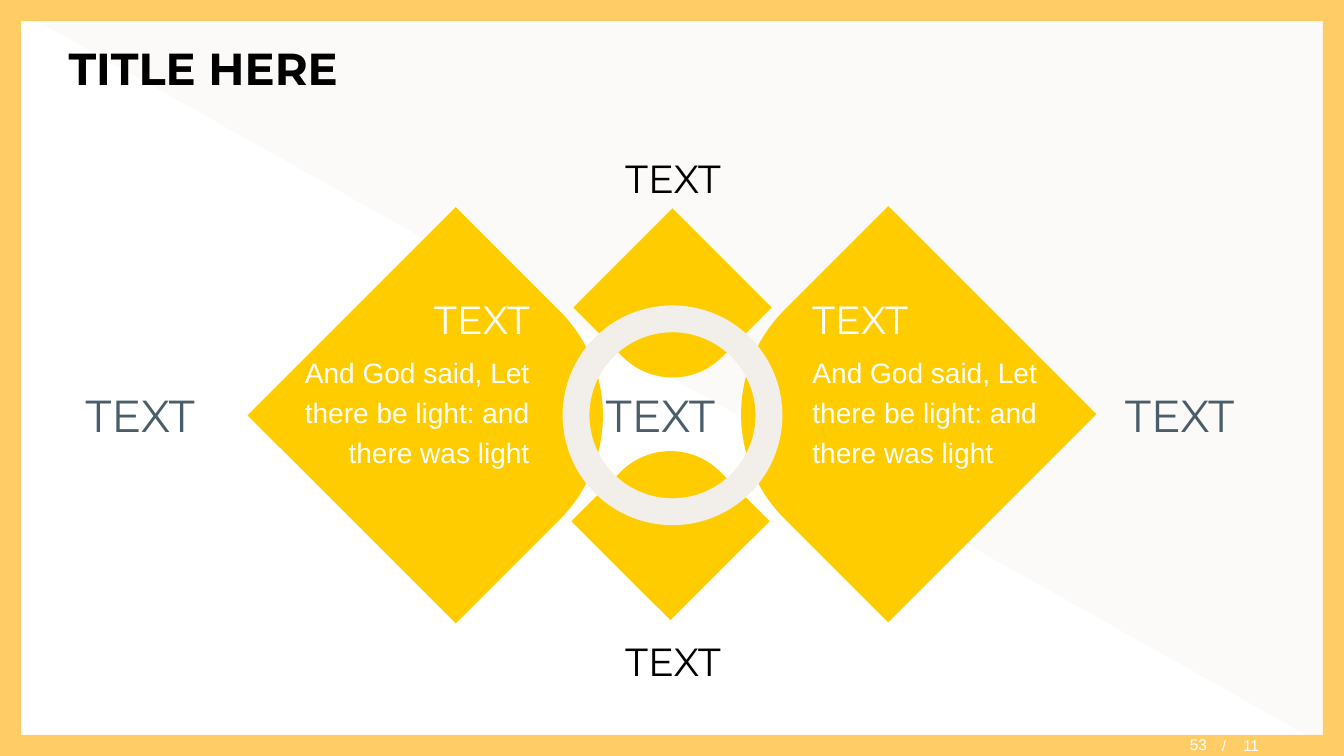
from dataclasses import dataclass

import lxml.etree
import pptx
import pptx.dml.color
import pptx.enum.shapes
import pptx.enum.text
import pptx.oxml.ns
import pptx.util

Inches = pptx.util.Inches
Shape = pptx.enum.shapes.MSO_SHAPE
Align = pptx.enum.text.PP_ALIGN
Anchor = pptx.enum.text.MSO_ANCHOR
AutoSize = pptx.enum.text.MSO_AUTO_SIZE


@dataclass(frozen=True)
class Theme:
    heading_font: str = "Montserrat"
    body_font: str = "Arial"
    black: str = "000000"
    white: str = "FFFFFF"
    slate: str = "4A5D69"
    yellow: str = "FFCC00"
    border: str = "FFCC66"
    cream: str = "FBFAF8"
    ring: str = "F2EFEA"
    large: int = 32
    medium: int = 28
    body: int = 20
    small: int = 11


@dataclass(frozen=True)
class Box:
    left: float
    top: float
    width: float
    height: float

    def inner(self, left, top, width, height):
        return Box(self.left + left, self.top + top, width, height)

    def centred(self, across, down, size):
        """Square whose centre is offset from the centre of this box."""
        return Box(self.left + self.width / 2 + across - size / 2,
                   self.top + self.height / 2 + down - size / 2, size, size)

    def lengths(self):
        return [Inches(n) for n in (self.left, self.top, self.width, self.height)]


THEME = Theme()


def add_filled(page, kind, box, color, rotation=0, adjust=None):
    shape = page.shapes.add_shape(kind, *box.lengths())
    shape.shadow.inherit = False
    shape.fill.solid()
    shape.fill.fore_color.rgb = pptx.dml.color.RGBColor.from_string(color)
    shape.line.fill.background()
    shape.rotation = rotation
    if adjust is not None:
        shape.adjustments[0] = adjust
    return shape


def add_span(para, text, size, color, font, bold=False):
    span = para.add_run()
    span.text = text
    span.font.size = pptx.util.Pt(size)
    span.font.name = font
    span.font.bold = bold
    span.font.color.rgb = pptx.dml.color.RGBColor.from_string(color)


def add_text(page, box, lines, align=Align.LEFT, wrap=True):
    """Text box that grows; each line is (text, size, color, font)."""
    frame = page.shapes.add_textbox(*box.lengths()).text_frame
    frame.word_wrap = wrap
    frame.auto_size = AutoSize.SHAPE_TO_FIT_TEXT
    for index, line in enumerate(lines):
        para = frame.add_paragraph() if index else frame.paragraphs[0]
        para.alignment = align
        para.line_spacing = 1.2
        para.space_before = para.space_after = pptx.util.Pt(2)
        add_span(para, *line)


def add_backdrop(page, box):
    # Tinted corner and border, kept behind the title
    for shape in (
        add_filled(page, Shape.RIGHT_TRIANGLE, box, THEME.cream, 180),
        add_filled(page, Shape.FRAME, box, THEME.border, adjust=0.028),
    ):
        page.shapes.title.element.addprevious(shape.element)


def add_title(page, box):
    title = page.shapes.title
    title.left, title.top, title.width, title.height = box.lengths()
    frame = title.text_frame
    frame.auto_size = AutoSize.NONE
    frame.vertical_anchor = Anchor.MIDDLE
    para = frame.paragraphs[0]
    para.alignment = Align.LEFT
    add_span(para, "TITLE HERE", THEME.large, THEME.black, THEME.heading_font, True)


def add_diagram(page, box):
    # Petals: offset from the centre, side, rotation of the rounded corner
    for across, down, side, rotation in (
        (-2.15, 0, 2.92, 45),
        (2.14, -0.01, 2.92, 225),
        (-0.02, 1.05, 1.39, 315),
        (0, -1.07, 1.39, 135),
    ):
        add_filled(page, Shape.ROUND_1_RECTANGLE, box.centred(across, down, side),
                   THEME.yellow, rotation, 0.5)

    # Text on the two large petals
    lines = [
        ("TEXT", THEME.medium, THEME.white, THEME.heading_font),
        ("And God said, Let there be light: and there was light",
         THEME.body, THEME.white, THEME.body_font),
    ]
    add_text(page, box.inner(2.05, 1.4, 2.55, 1.93), lines, Align.RIGHT)
    add_text(page, box.inner(7.21, 1.4, 2.58, 1.93), lines)

    # Ring in the middle
    add_filled(page, Shape.DONUT, box.centred(0, 0, 2.18), THEME.ring, adjust=0.122)

    # Labels above and below
    for top in (0, 4.79):
        add_text(page, box.inner(2.16, top, 7.53, 0.67),
                 [("TEXT", THEME.medium, THEME.black, THEME.heading_font)], Align.CENTER)

    # Labels at the left, centre and right
    for left in (0, 5.16, 10.31):
        add_text(page, box.inner(left, 2.3, 1.52, 0.75),
                 [("TEXT", THEME.large, THEME.slate, THEME.heading_font)], wrap=False)


def add_page_number(page, box):
    # Current page, then a slash and the total set apart by a tab stop
    for part, text, align, bottom in (
        (box.inner(0, 0.02, 2.59, 0.18), "53", Align.RIGHT, 0.05),
        (box.inner(2.54, 0, 1.31, 0.18), "/\t11", Align.LEFT, 0),
    ):
        frame = page.shapes.add_textbox(*part.lengths()).text_frame
        frame.word_wrap = True
        frame.vertical_anchor = Anchor.MIDDLE
        frame.margin_top = 0
        frame.margin_bottom = Inches(bottom)
        para = frame.paragraphs[0]
        para.alignment = align
        add_span(para, text, THEME.small, THEME.white, THEME.body_font)
        if "\t" in text:
            name = pptx.oxml.ns.qn
            stops = lxml.etree.SubElement(para._p.get_or_add_pPr(), name("a:tabLst"))
            lxml.etree.SubElement(stops, name("a:tab"), pos=str(Inches(0.21)), algn="l")


def main():
    deck = pptx.Presentation()
    deck.slide_width, deck.slide_height = Inches(13.33), Inches(7.5)
    page = deck.slides.add_slide(deck.slide_layouts.get_by_name("Title Only"))
    add_backdrop(page, Box(0, 0, 13.33, 7.5))
    add_title(page, Box(0.58, 0.28, 12.18, 0.79))
    add_diagram(page, Box(0.75, 1.39, 11.84, 5.46))
    add_page_number(page, Box(9.48, 7.3, 3.85, 0.2))
    deck.save("out.pptx")


if __name__ == "__main__":
    main()
